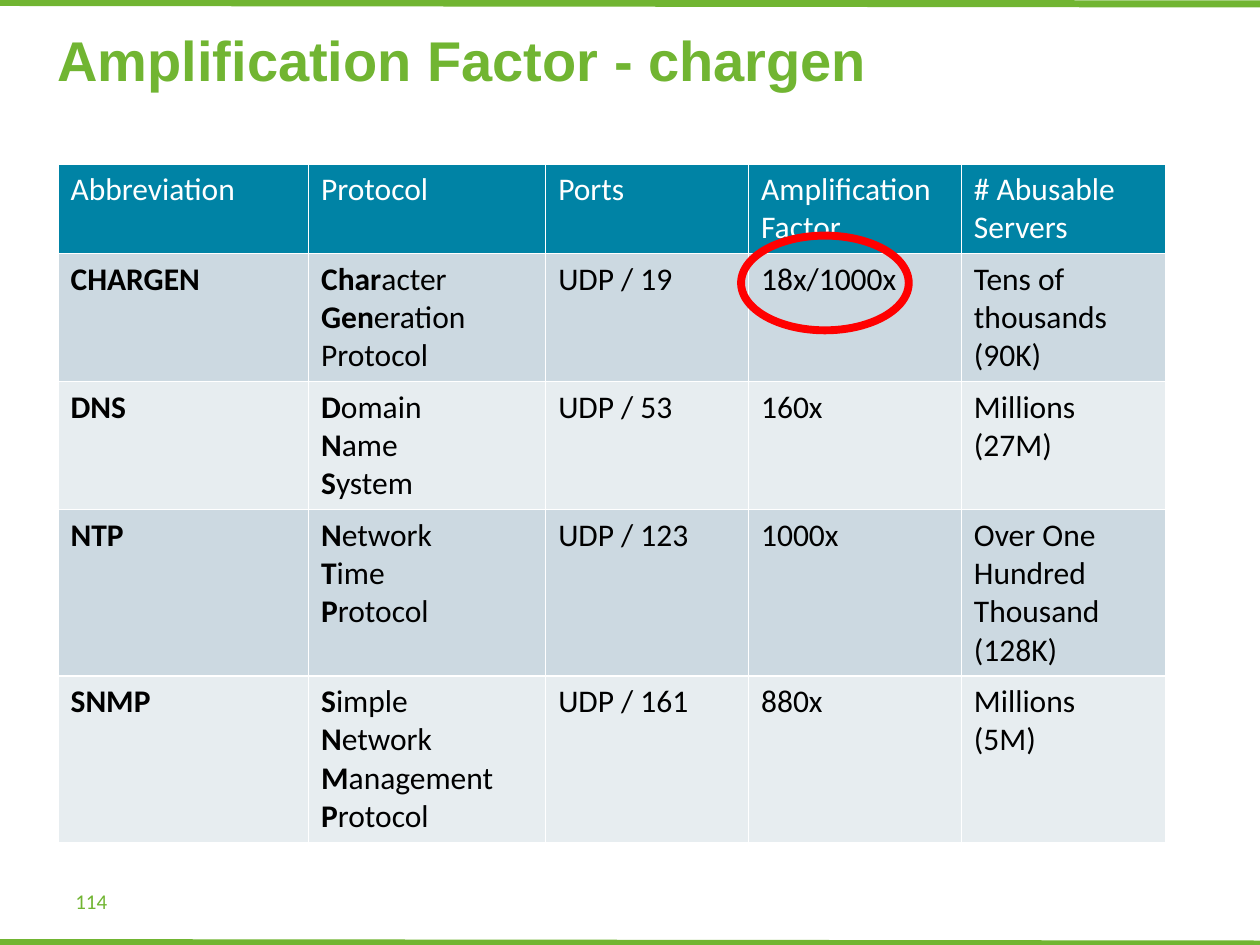
from dataclasses import dataclass

from lxml import etree
from pptx import Presentation
from pptx.dml.color import RGBColor
from pptx.enum.shapes import MSO_CONNECTOR, MSO_SHAPE
from pptx.enum.text import MSO_ANCHOR
from pptx.oxml.ns import qn
from pptx.util import Cm, Pt

STRAIGHT = MSO_CONNECTOR.STRAIGHT
OVAL = MSO_SHAPE.OVAL
MIDDLE = MSO_ANCHOR.MIDDLE


@dataclass(frozen=True)
class Theme:
    green: str = "71B532"
    header: str = "0083A5"
    bands: tuple = ("CCD9E1", "E7EDF0")
    white: str = "FFFFFF"
    black: str = "000000"
    red: str = "FF0000"
    title_font: str = "Arial"
    body_font: str = "Calibri"
    title_size: int = 32
    table_size: int = 18
    number_size: int = 12
    rule_width: float = 4
    ring_width: float = 4.5


THEME = Theme()

COLUMN_WIDTHS = (5.05, 4.78, 4.09, 4.29, 4.11)
ROW_HEIGHTS = (1.75, 2.58, 2.58, 3.35, 3.35)

# A newline starts a paragraph; the part before a bar is bold
ROWS = (
    ("Abbreviation", "Protocol", "Ports", "Amplification\nFactor", "# Abusable\nServers"),
    ("CHARGEN|", "Char|acter\nGen|eration\nProtocol", "UDP / 19", "18x/1000x",
     "Tens of thousands\n(90K)"),
    ("DNS|", "D|omain\nN|ame\nS|ystem", "UDP / 53", "160x", "Millions (27M)"),
    ("NTP|", "N|etwork\nT|ime\nP|rotocol", "UDP / 123", "1000x",
     "Over One Hundred Thousand\n(128K)"),
    ("SNMP|", "S|imple\nN|etwork\nM|anagement\nP|rotocol", "UDP / 161", "880x",
     "Millions\n(5M)"),
)


def add_run(paragraph, text, color, **format_values):
    run = paragraph.add_run()
    run.text = text
    run.font.color.rgb = RGBColor.from_string(color)
    for name, value in format_values.items():
        setattr(run.font, name, value)


def add_text(slide, box, text, **format_values):
    frame = slide.shapes.add_textbox(*map(Cm, box)).text_frame
    frame.word_wrap = True
    frame.vertical_anchor = MIDDLE
    add_run(frame.paragraphs[0], text, THEME.green, **format_values)


def add_rule(slide, top):
    rule = slide.shapes.add_connector(STRAIGHT, Cm(0), Cm(top), Cm(25.45), Cm(top + 0.03))
    rule.line.color.rgb = RGBColor.from_string(THEME.green)
    rule.line.width = Pt(THEME.rule_width)
    etree.SubElement(rule._element.spPr, qn("a:effectLst"))


def fill_cell(cell, text, fill, color):
    cell.fill.solid()
    cell.fill.fore_color.rgb = RGBColor.from_string(fill)
    font = {"name": THEME.body_font, "size": Pt(THEME.table_size)}
    for index, line in enumerate(text.split("\n")):
        frame = cell.text_frame
        paragraph = frame.add_paragraph() if index else frame.paragraphs[0]
        strong, bar, plain = line.rpartition("|")
        for part, bold in ((strong, True), (plain, False)):
            if part:
                add_run(paragraph, part, color, bold=bold, **font)


def add_protocol_table(slide):
    # The default table style supplies the white cell borders
    table = slide.shapes.add_table(
        len(ROWS), len(COLUMN_WIDTHS), Cm(1.17), Cm(3.31),
        Cm(sum(COLUMN_WIDTHS)), Cm(sum(ROW_HEIGHTS))).table
    for column, width in zip(table.columns, COLUMN_WIDTHS):
        column.width = Cm(width)
    for index, (row, height, texts) in enumerate(zip(table.rows, ROW_HEIGHTS, ROWS)):
        row.height = Cm(height)
        fill = THEME.bands[(index - 1) % 2] if index else THEME.header
        color = THEME.black if index else THEME.white
        for cell, text in zip(row.cells, texts):
            fill_cell(cell, text, fill, color)


def add_ring(slide, box):
    ring = slide.shapes.add_shape(OVAL, *map(Cm, box))
    ring.shadow.inherit = False
    ring.fill.background()
    ring.line.color.rgb = RGBColor.from_string(THEME.red)
    ring.line.width = Pt(THEME.ring_width)


def main():
    presentation = Presentation()
    presentation.slide_width = Cm(25.4)
    presentation.slide_height = Cm(19.05)
    slide = presentation.slides.add_slide(presentation.slide_layouts[6])

    # Rules at the slide's bottom and top edges
    for top in (19, 0.05):
        add_rule(slide, top)

    # Table with the chargen factor circled
    add_protocol_table(slide)
    add_ring(slide, (14.94, 4.75, 3.38, 1.91))

    # Title and page number
    add_text(slide, (0.91, 0.38, 23.57, 1.63), "Amplification Factor - chargen",
             name=THEME.title_font, size=Pt(THEME.title_size), bold=True)
    add_text(slide, (1.27, 17.65, 5.92, 1.02), "114",
             name=THEME.body_font, size=Pt(THEME.number_size))

    presentation.save("out.pptx")


if __name__ == "__main__":
    main()
